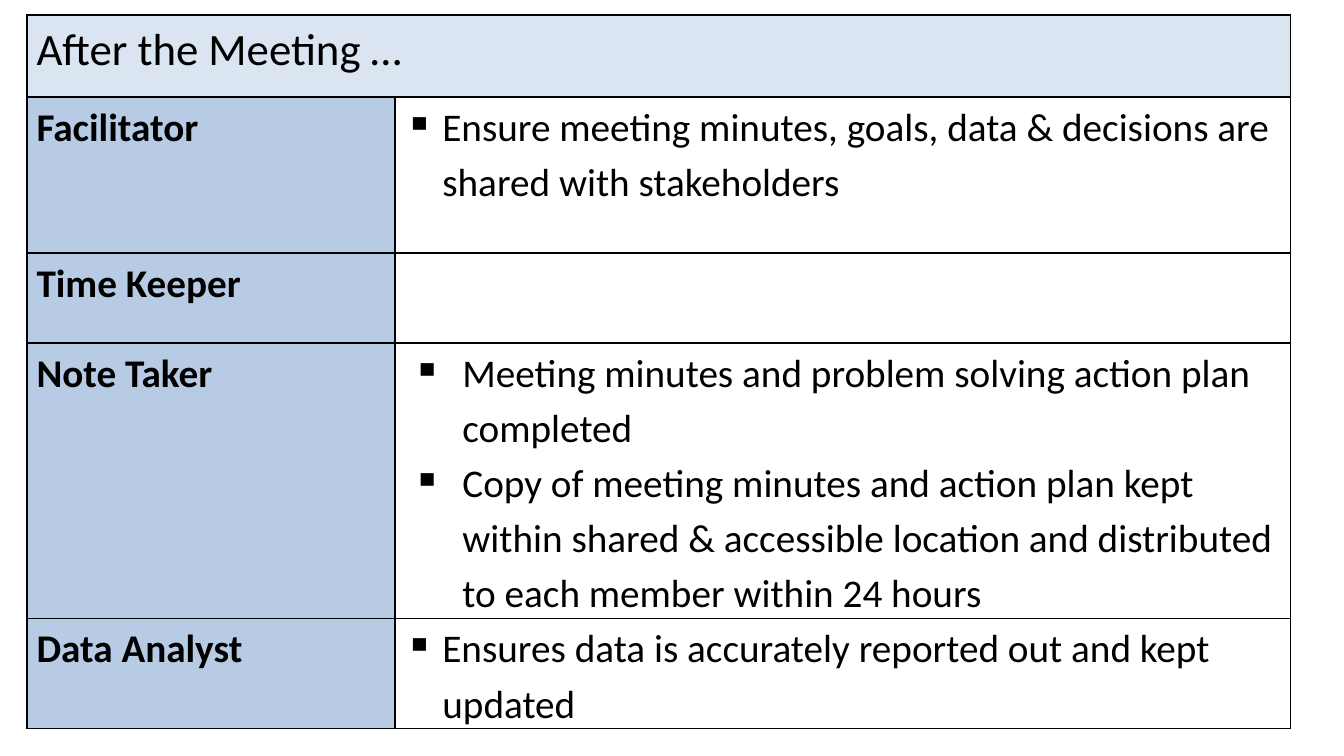
import pptx
import pptx.dml.color
import pptx.oxml
import pptx.oxml.ns
import pptx.util
from pptx.util import Cm

COLORS = {"text": "000000", "border": "000000", "heading": "DAE5F1", "role": "B7CCE4"}
FONT = "Calibri"
COLUMN_WIDTHS = [6.96, 16.92]
ROW_HEIGHTS = [1.55, 2.95, 1.7, 5.21, 2.03]
NARROW = {"margin": 0.18, "indent": 0.71, "hanging": 0.71}
WIDE = {"margin": 0.3, "indent": 0.97, "hanging": 0.94}

# Role, duties, and the layout of the duty list
ROLES = [
    ("Facilitator",
     ["Ensure meeting minutes, goals, data & decisions are shared with stakeholders"], NARROW),
    ("Time Keeper", [], NARROW),
    ("Note Taker",
     ["Meeting minutes and problem solving action plan completed",
      "Copy of meeting minutes and action plan kept within shared & accessible location "
      "and distributed to each member within 24 hours"], WIDE),
    ("Data Analyst",
     ["Ensures data is accurately reported out and kept updated"], NARROW),
]


def rgb(name):
    return pptx.dml.color.RGBColor.from_string(COLORS[name])


def add_xml(parent, tag, content="", attributes=""):
    namespace = pptx.oxml.ns.nsdecls("a")
    parent.append(pptx.oxml.parse_xml(
        f"<a:{tag} {namespace} {attributes}>{content}</a:{tag}>"))


def style_cell(cell, fill=None, margin=0.18):
    cell.margin_left = cell.margin_right = Cm(margin)
    cell.margin_top = cell.margin_bottom = 0
    # Borders come before the fill in the cell properties
    properties = cell._tc.get_or_add_tcPr()
    line = f'<a:solidFill><a:srgbClr val="{COLORS["border"]}"/></a:solidFill>'
    for side in ("lnL", "lnR", "lnT", "lnB"):
        add_xml(properties, side, line, 'w="12700"')
    if fill:
        cell.fill.solid()
        cell.fill.fore_color.rgb = rgb(fill)
    else:
        cell.fill.background()


def write_paragraph(paragraph, text, size=21, bold=False):
    paragraph.text = text
    paragraph.line_spacing = 1.15
    paragraph.font.name = FONT
    paragraph.font.size = pptx.util.Pt(size)
    paragraph.font.bold = bold
    paragraph.font.color.rgb = rgb("text")


def add_bullet(paragraph, indent, hanging):
    properties = paragraph._p.get_or_add_pPr()
    properties.set("marL", str(Cm(indent)))
    properties.set("indent", str(-Cm(hanging)))
    bullet = pptx.oxml.parse_xml(
        f'<a:buChar {pptx.oxml.ns.nsdecls("a")} char="▪"/>')
    # The bullet must precede the default run properties
    properties.insert_element_before(bullet, "a:tabLst", "a:defRPr", "a:extLst")


def write_duties(cell, duties, layout):
    style_cell(cell, margin=layout["margin"])
    frame = cell.text_frame
    for index, duty in enumerate(duties):
        paragraph = frame.add_paragraph() if index else frame.paragraphs[0]
        write_paragraph(paragraph, duty)
        add_bullet(paragraph, layout["indent"], layout["hanging"])


def add_role_table(slide):
    table = slide.shapes.add_table(
        len(ROW_HEIGHTS), len(COLUMN_WIDTHS), Cm(0.51), Cm(0.28),
        Cm(sum(COLUMN_WIDTHS)), Cm(sum(ROW_HEIGHTS))).table
    table.first_row = table.horz_banding = False
    for column, width in zip(table.columns, COLUMN_WIDTHS):
        column.width = Cm(width)
    for row, height in zip(table.rows, ROW_HEIGHTS):
        row.height = Cm(height)

    # Heading across both columns
    heading = table.cell(0, 0)
    heading.merge(table.cell(0, 1))
    for column in range(2):
        style_cell(table.cell(0, column), "heading")
    write_paragraph(heading.text_frame.paragraphs[0], "After the Meeting …", size=24)

    # One row for each role
    for row, (role, duties, layout) in enumerate(ROLES, start=1):
        role_cell = table.cell(row, 0)
        style_cell(role_cell, "role")
        write_paragraph(role_cell.text_frame.paragraphs[0], role, bold=True)
        write_duties(table.cell(row, 1), duties, layout)


def main():
    presentation = pptx.Presentation()
    presentation.slide_width = Cm(25.4)
    presentation.slide_height = Cm(14.29)
    slide = presentation.slides.add_slide(presentation.slide_layouts[6])
    add_role_table(slide)
    presentation.save("out.pptx")


if __name__ == "__main__":
    main()
